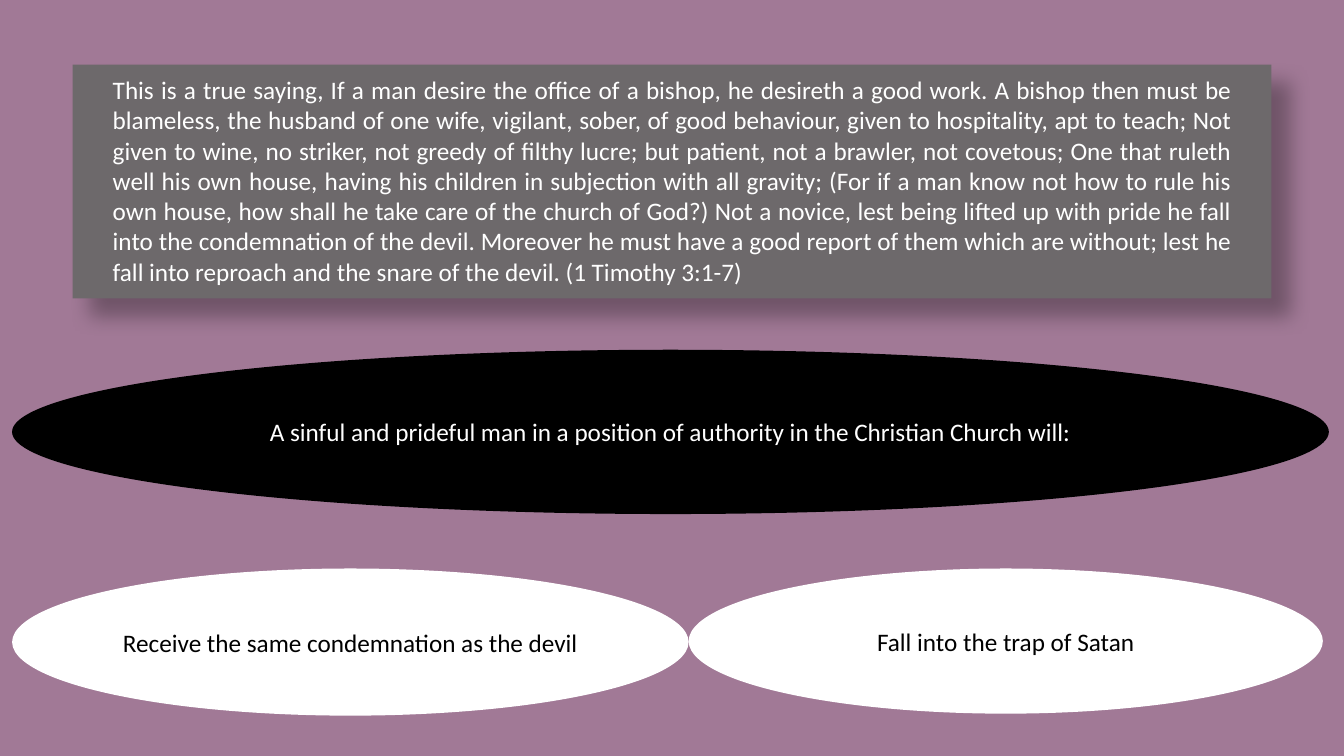
from pptx import Presentation
from pptx.dml.color import RGBColor
from pptx.enum.shapes import MSO_SHAPE
from pptx.enum.text import MSO_ANCHOR, PP_ALIGN
from pptx.oxml import parse_xml
from pptx.oxml.ns import nsdecls, qn
from pptx.util import Inches, Pt

VERSE = (
    "This is a true saying, If a man desire the office of a bishop, he desireth a good work. "
    "A bishop then must be blameless, the husband of one wife, vigilant, sober, of good "
    "behaviour, given to hospitality, apt to teach; Not given to wine, no striker, not greedy "
    "of filthy lucre; but patient, not a brawler, not covetous; One that ruleth well his own "
    "house, having his children in subjection with all gravity; (For if a man know not how to "
    "rule his own house, how shall he take care of the church of God?) Not a novice, lest being "
    "lifted up with pride he fall into the condemnation of the devil. Moreover he must have a "
    "good report of them which are without; lest he fall into reproach and the snare of the "
    "devil. (1 Timothy 3:1-7)"
)


def color(value):
    return RGBColor.from_string(value)


class SlideBuilder:
    font_format = {"name": "Calibri", "size": Pt(18)}

    def __init__(self, page, background):
        self.page = page
        page.background.fill.solid()
        page.background.fill.fore_color.rgb = color(background)

    def add_text(self, box, text, ink, align, anchor):
        frame = box.text_frame
        frame.word_wrap = True
        frame.vertical_anchor = anchor
        para = frame.paragraphs[0]
        para.alignment = align
        span = para.add_run()
        span.text = text
        for name, value in self.font_format.items():
            setattr(span.font, name, value)
        span.font.color.rgb = color(ink)

    def shape(self, kind, place, fill):
        box = self.page.shapes.add_shape(kind, *map(Inches, place))
        box.shadow.inherit = False
        box.fill.solid()
        box.fill.fore_color.rgb = color(fill)
        box.line.fill.background()
        return box

    def shadowed_panel(self, place, fill):
        box = self.shape(MSO_SHAPE.RECTANGLE, place, fill)
        effects = box.element.spPr.find(qn("a:effectLst"))
        effects.append(parse_xml(
            f'<a:outerShdw {nsdecls("a")} blurRad="{Pt(15)}" dist="{Pt(18)}" '
            'dir="2700000" algn="tl" rotWithShape="0"><a:srgbClr val="000000">'
            '<a:alpha val="30000"/></a:srgbClr></a:outerShdw>'))

    def ellipse(self, place, fill, text, ink):
        box = self.shape(MSO_SHAPE.OVAL, place, fill)
        self.add_text(box, text, ink, PP_ALIGN.CENTER, MSO_ANCHOR.MIDDLE)

    def passage(self, place, text, ink):
        box = self.page.shapes.add_textbox(*map(Inches, place))
        self.add_text(box, text, ink, PP_ALIGN.JUSTIFY, MSO_ANCHOR.TOP)


def main():
    deck = Presentation()
    deck.slide_width, deck.slide_height = Inches(13.33), Inches(7.5)
    builder = SlideBuilder(deck.slides.add_slide(deck.slide_layouts[6]), "A17996")

    # Scripture passage
    builder.shadowed_panel((0.72, 0.64, 11.89, 2.32), "6D696B")
    builder.passage((1.02, 0.69, 11.3, 2.22), VERSE, "FFFFFF")

    # Statement and its two outcomes
    builder.ellipse((0.12, 3.47, 13.06, 1.63), "000000",
                    "A sinful and prideful man in a position of authority "
                    "in the Christian Church will:", "FFFFFF")
    outcomes = [
        ((0.12, 5.64, 6.71, 1.46), "Receive the same condemnation as the devil"),
        ((6.83, 5.64, 6.29, 1.44), "Fall into the trap of Satan"),
    ]
    for place, text in outcomes:
        builder.ellipse(place, "FFFFFF", text, "000000")

    deck.save("out.pptx")


if __name__ == "__main__":
    main()
